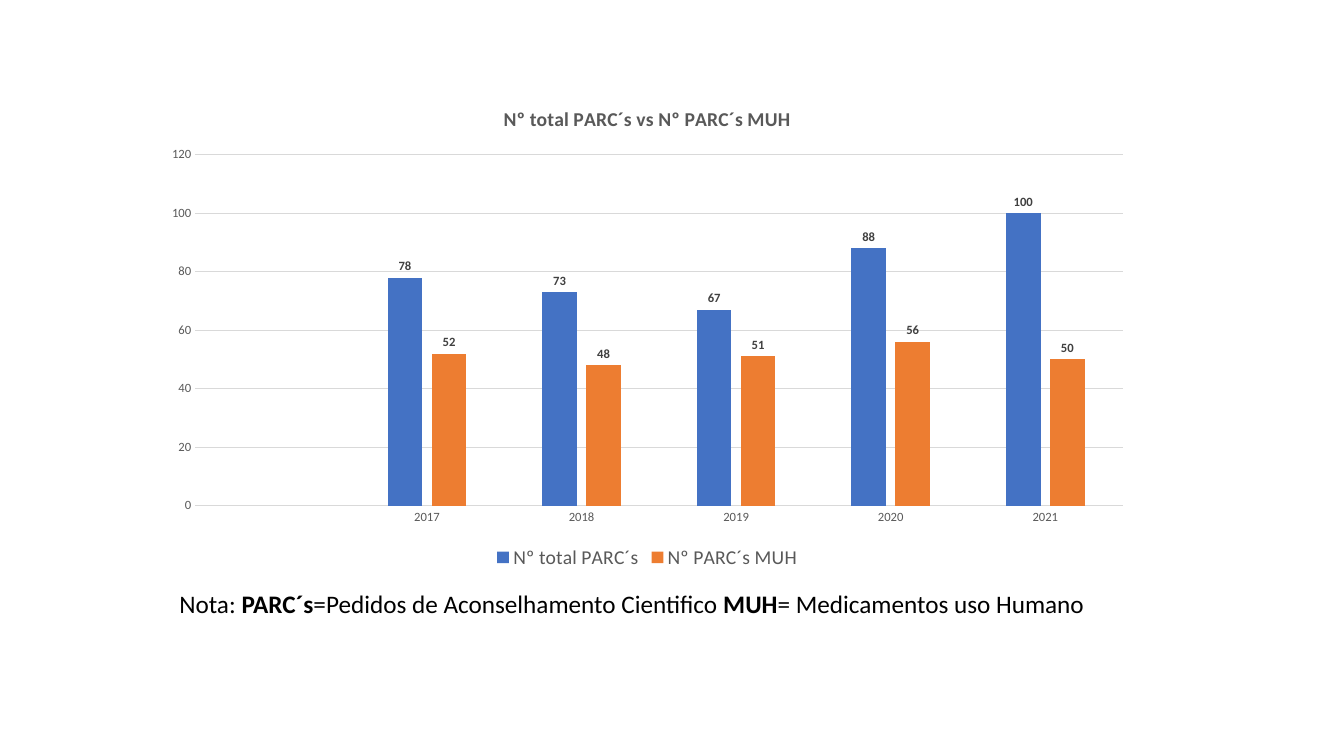
from pptx import Presentation
from pptx.chart.data import CategoryChartData
from pptx.dml.color import RGBColor
from pptx.enum.chart import (XL_CHART_TYPE as ChartType, XL_LABEL_POSITION as LabelPosition,
                             XL_LEGEND_POSITION as LegendPosition, XL_TICK_MARK as TickMark)
from pptx.enum.text import MSO_AUTO_SIZE as AutoSize
from pptx.util import Inches, Pt

# Content
TITLE = "Nº total PARC´s vs Nº PARC´s MUH"
YEARS = ["", "2017", "2018", "2019", "2020", "2021"]
SERIES = [
    ("Nº total PARC´s", [None, 78, 73, 67, 88, 100], "4472C4"),
    ("Nº PARC´s MUH", [None, 52, 48, 51, 56, 50], "ED7D31"),
]
NOTE = [
    ("Nota: ", False),
    ("PARC´s", True),
    ("=Pedidos de Aconselhamento Cientifico ", False),
    ("MUH", True),
    ("= Medicamentos uso Humano", False),
]
CHART_AREA = (1.51, 0.86, 9.82, 4.83)
NOTE_AREA = (1.68, 5.79, 9.29, 0.4)

# Theme: size, colour and weight of each kind of text
THEME = {
    "font": "Calibri",
    "grid": "D9D9D9",
    "base": (10, "000000", False),
    "title": (14, "595959", True),
    "axis": (9, "595959", False),
    "legend": (14, "595959", False),
    "label": (9, "404040", True),
    "note": (18, "000000", False),
}


def style_font(font, role):
    size, color, bold = THEME[role]
    for name, value in {"name": THEME["font"], "size": Pt(size), "bold": bold}.items():
        setattr(font, name, value)
    font.color.rgb = RGBColor.from_string(color)


def style_line(line):
    line.width = Pt(0.75)
    line.color.rgb = RGBColor.from_string(THEME["grid"])


def add_column_chart(page):
    data = CategoryChartData()
    data.categories = YEARS
    for name, values, _ in SERIES:
        data.add_series(name, values)
    chart = page.shapes.add_chart(
        ChartType.COLUMN_CLUSTERED, *map(Inches, CHART_AREA), data).chart
    style_font(chart.font, "base")

    # Title and legend
    chart.has_title = True
    title = chart.chart_title
    title.include_in_layout = False
    title.text_frame.text = TITLE
    style_font(title.text_frame.paragraphs[0].runs[0].font, "title")
    chart.has_legend = True
    chart.legend.position = LegendPosition.BOTTOM
    chart.legend.include_in_layout = False
    style_font(chart.legend.font, "legend")

    # Axes
    for axis in (chart.category_axis, chart.value_axis):
        axis.major_tick_mark = axis.minor_tick_mark = TickMark.NONE
        style_font(axis.tick_labels.font, "axis")
    style_line(chart.category_axis.format.line)
    values_axis = chart.value_axis
    values_axis.format.line.fill.background()
    values_axis.has_major_gridlines = True
    style_line(values_axis.major_gridlines.format.line)
    for name, value in {"minimum_scale": 0, "maximum_scale": 120, "major_unit": 20}.items():
        setattr(values_axis, name, value)

    # Columns and their values
    plot = chart.plots[0]
    for name, value in {"gap_width": 219, "overlap": -27, "vary_by_categories": False}.items():
        setattr(plot, name, value)
    for series, (_, _, color) in zip(plot.series, SERIES):
        series.format.fill.solid()
        series.format.fill.fore_color.rgb = RGBColor.from_string(color)
        labels = series.data_labels
        labels.show_value = True
        labels.position = LabelPosition.OUTSIDE_END
        style_font(labels.font, "label")


def add_note(page):
    frame = page.shapes.add_textbox(*map(Inches, NOTE_AREA)).text_frame
    frame.word_wrap = True
    frame.auto_size = AutoSize.SHAPE_TO_FIT_TEXT
    para = frame.paragraphs[0]
    for text, bold in NOTE:
        span = para.add_run()
        span.text = text
        style_font(span.font, "note")
        span.font.bold = bold


def main():
    deck = Presentation()
    deck.slide_width, deck.slide_height = Inches(13.33), Inches(7.5)
    page = deck.slides.add_slide(deck.slide_layouts[6])
    add_column_chart(page)
    add_note(page)
    deck.save("out.pptx")


if __name__ == "__main__":
    main()
